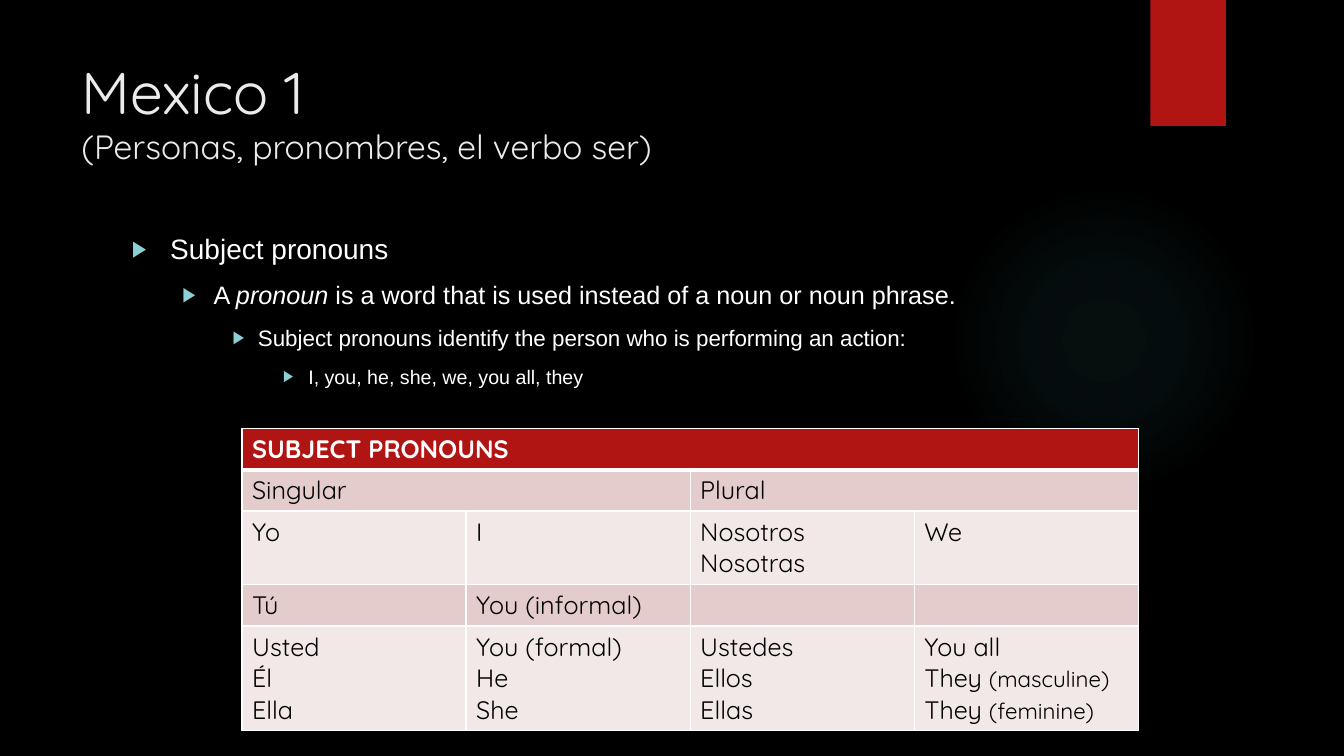
from dataclasses import dataclass

from lxml.etree import SubElement
from pptx import Presentation
from pptx.dml.color import RGBColor
from pptx.enum.shapes import MSO_SHAPE as Preset
from pptx.oxml import parse_xml
from pptx.oxml.ns import nsdecls, qn
from pptx.util import Inches, Pt

BLACK = RGBColor(0x00, 0x00, 0x00)
WHITE = RGBColor(0xFF, 0xFF, 0xFF)
TITLE_GRAY = RGBColor(0xEB, 0xEB, 0xEB)
RED = RGBColor(0xB0, 0x15, 0x13)
ROSE = RGBColor(0xE4, 0xCC, 0xCC)
PALE_ROSE = RGBColor(0xF2, 0xE8, 0xE7)
GLOW = RGBColor(0x50, 0xB9, 0xC1)
BULLET_TEAL = RGBColor(0x8A, 0xD0, 0xD6)
DISPLAY_FONT = "Quicksand"
BODY_FONT = "Arial"


@dataclass
class Span:
    text: str
    size: float = 18
    italic: bool = False
    bold: bool = False


@dataclass
class Bullet:
    spans: list[Span]
    indent: float
    hanging: float


@dataclass
class Cell:
    lines: list[list[Span]]
    columns: int = 1


@dataclass
class Row:
    height: float
    fill: RGBColor
    cells: list[Cell]
    color: RGBColor = BLACK


def words(*lines: str, columns: int = 1) -> Cell:
    return Cell([[Span(line)] for line in lines], columns)


BULLETS = [
    Bullet([Span("Subject pronouns", 20)], 0.38, 0.38),
    Bullet([Span("A "), Span("pronoun", italic=True),
            Span(" is a word that is used instead of a noun or noun phrase.")], 0.81, 0.31),
    Bullet([Span("Subject pronouns identify the person who is performing an action:", 16)],
           1.25, 0.25),
    Bullet([Span("I, you, he, she, we, you all, they", 14)], 1.75, 0.25),
]
ROWS = [
    Row(0.41, RED, [Cell([[Span("SUBJECT PRONOUNS", bold=True)]], 4)], WHITE),
    Row(0.41, ROSE, [words("Singular", columns=2), words("Plural", columns=2)]),
    Row(0.73, PALE_ROSE, [words("Yo"), words("I"), words("Nosotros", "Nosotras"), words("We")]),
    Row(0.41, ROSE, [words("Tú"), words("You (informal)"), words(), words()]),
    Row(1.04, PALE_ROSE, [
        words("Usted", "Él", "Ella"), words("You (formal)", "He", "She"),
        words("Ustedes", "Ellos", "Ellas"),
        Cell([[Span("You all")], [Span("They "), Span("(masculine)", 16)],
              [Span("They "), Span("(feminine)", 16)]])]),
]


def add_span(para, span: Span, font: str, color: RGBColor) -> None:
    run = para.add_run()
    run.text = span.text
    run.font.name = font
    run.font.size = Pt(span.size)
    run.font.bold = span.bold
    run.font.italic = span.italic
    run.font.color.rgb = color


def next_paragraph(frame, index: int):
    return frame.add_paragraph() if index else frame.paragraphs[0]


def add_decoration(page, preset: Preset, left: float, top: float, width: float, height: float):
    shape = page.shapes.add_shape(preset, Inches(left), Inches(top), Inches(width), Inches(height))
    shape.shadow.inherit = False
    shape.line.fill.background()
    shape.fill.solid()
    shape.fill.fore_color.rgb = RED
    return shape


def add_glow(page) -> None:
    glow = add_decoration(page, Preset.OVAL, 9.41, 1.83, 3.08, 3.08)
    stops = "".join(
        f'<a:gs pos="{place * 1000}"><a:srgbClr val="{GLOW}">'
        f'<a:alpha val="{alpha * 1000}"/></a:srgbClr></a:gs>'
        for place, alpha in ((0, 7), (36, 6), (69, 0)))
    gradient = parse_xml(
        f'<a:gradFill {nsdecls("a")} rotWithShape="1"><a:gsLst>{stops}</a:gsLst>'
        '<a:path path="circle"><a:fillToRect l="50000" t="50000" r="50000" b="50000"/>'
        '</a:path></a:gradFill>')
    properties = glow.fill._xPr
    properties.replace(properties.find(qn("a:solidFill")), gradient)


def add_frame(page, left: float, top: float, width: float, height: float):
    box = page.shapes.add_textbox(Inches(left), Inches(top), Inches(width), Inches(height))
    box.text_frame.word_wrap = True
    return box.text_frame


def add_title(page) -> None:
    para = add_frame(page, 0.71, 0.5, 10.29, 1.53).paragraphs[0]
    add_span(para, Span("Mexico 1", 42), DISPLAY_FONT, TITLE_GRAY)
    para.add_line_break()
    add_span(para, Span("(Personas, pronombres, el verbo ser)", 24), DISPLAY_FONT, TITLE_GRAY)


def add_bullets(page) -> None:
    frame = add_frame(page, 1.21, 2.25, 9.78, 4.59)
    for level, bullet in enumerate(BULLETS):
        para = next_paragraph(frame, level)
        para.level = level
        properties = para._p.get_or_add_pPr()
        properties.set("marL", str(Inches(bullet.indent)))
        properties.set("indent", str(-Inches(bullet.hanging)))
        color = SubElement(properties, qn("a:buClr"))
        SubElement(color, qn("a:srgbClr"), val=str(BULLET_TEAL))
        SubElement(properties, qn("a:buSzPct"), val="80000")
        SubElement(properties, qn("a:buFont"), typeface=BODY_FONT)
        SubElement(properties, qn("a:buChar"), char="▶")
        if level:
            para.space_before = Pt(10)
        for span in bullet.spans:
            add_span(para, span, BODY_FONT, WHITE)


def style_cell(cell, row_index: int, fill: RGBColor) -> None:
    # The rule under the heading row is thicker than the others
    widths = {"L": 1, "R": 1, "T": 3 if row_index == 1 else 1, "B": 3 if row_index == 0 else 1}
    properties = cell._tc.get_or_add_tcPr()
    for side, width in widths.items():
        line = SubElement(properties, qn(f"a:ln{side}"), w=str(Pt(width)))
        SubElement(SubElement(line, qn("a:solidFill")), qn("a:srgbClr"), val=str(WHITE))
    cell.fill.solid()
    cell.fill.fore_color.rgb = fill


def add_pronoun_table(page) -> None:
    total = sum(row.height for row in ROWS)
    table = page.shapes.add_table(
        len(ROWS), 4, Inches(2.4), Inches(4.25), Inches(8.89), Inches(total)).table
    for row_index, row in enumerate(ROWS):
        table.rows[row_index].height = Inches(row.height)
        for cell in table.rows[row_index].cells:
            style_cell(cell, row_index, row.fill)
        column = 0
        for content in row.cells:
            cell = table.cell(row_index, column)
            column += content.columns
            if content.columns > 1:
                cell.merge(table.cell(row_index, column - 1))
            for line_index, line in enumerate(content.lines):
                para = next_paragraph(cell.text_frame, line_index)
                for span in line:
                    add_span(para, span, DISPLAY_FONT, row.color)


def main() -> None:
    deck = Presentation()
    deck.slide_width = Inches(13.33)
    deck.slide_height = Inches(7.5)
    page = deck.slides.add_slide(deck.slide_layouts[6])
    page.background.fill.solid()
    page.background.fill.fore_color.rgb = BLACK

    # Backdrop
    add_glow(page)
    add_decoration(page, Preset.RECTANGLE, 11.41, 0, 0.75, 1.25)

    # Content
    add_title(page)
    add_bullets(page)
    add_pronoun_table(page)
    deck.save("out.pptx")


if __name__ == "__main__":
    main()
